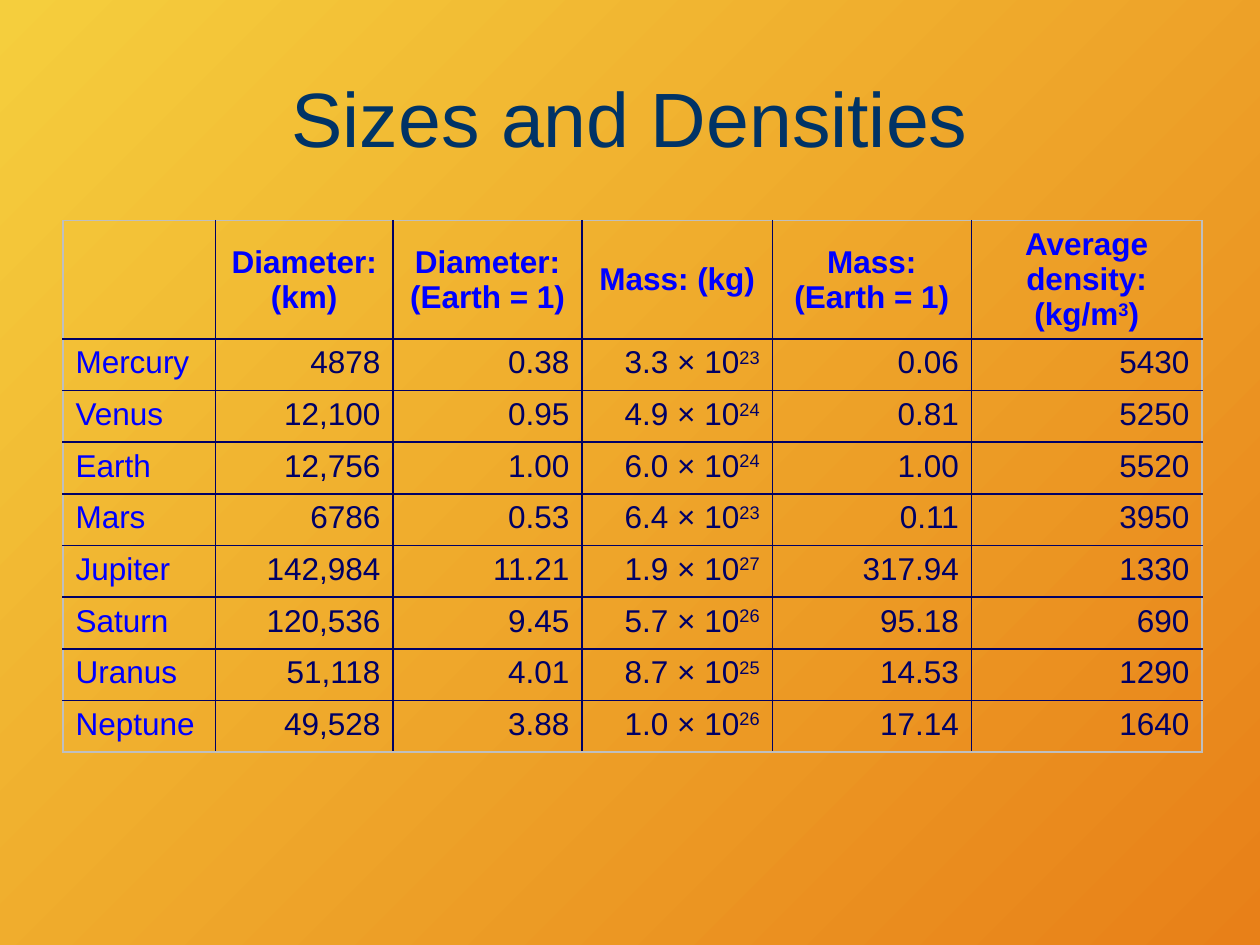
"""Build a slide with a table of planet sizes and densities."""
from dataclasses import dataclass

from lxml import etree
from pptx import Presentation
from pptx import util as u
from pptx.dml.color import RGBColor
from pptx.enum import text
from pptx.oxml import ns

PX = 9144


@dataclass(frozen=True)
class Theme:
    """Hold the colours, font and type sizes."""
    font: str = "Arial"
    head: str = "003366"
    label: str = "0000FF"
    ink: str = "000066"
    rim: str = "BFBFBF"
    light: str = "F5CE3D"
    deep: str = "E88018"
    big: int = 44
    body: int = 18


class Deck:
    """Draw styled elements on the current slide."""

    def __init__(self, theme, wide, high):
        """Open a deck of the given size."""
        self.theme = theme
        self.show = Presentation()
        self.show.slide_width, self.show.slide_height = wide * PX, high * PX
        self.slide = None

    def page(self):
        """Add a title-only slide with a diagonal gradient."""
        self.slide = self.show.slides.add_slide(self.show.slide_layouts[5])
        fill = self.slide.background.fill
        fill.gradient()
        fill.gradient_angle = 315
        for stop, tone in zip(fill.gradient_stops, (self.theme.light, self.theme.deep)):
            stop.color.rgb = RGBColor.from_string(tone)

    def label(self, frame, words, size, tone, align, bold=False):
        """Add text runs, raising each part between carets."""
        para = frame.paragraphs[0]
        para.alignment = align
        para.font.size = u.Pt(size)
        for num, part in enumerate(words.split("^")):
            if not part:
                continue
            run = para.add_run()
            run.text = part
            font = run.font
            font.name, font.size, font.bold = self.theme.font, u.Pt(size), bold
            font.color.rgb = RGBColor.from_string(tone)
            if num % 2:
                run._r.get_or_add_rPr().set("baseline", "30000")

    def title(self, words, left, top, wide, high):
        """Place and fill the title."""
        box = self.slide.shapes.title
        box.left, box.top, box.width, box.height = (n * PX for n in (left, top, wide, high))
        box.text_frame.vertical_anchor = text.MSO_ANCHOR.MIDDLE
        self.label(box.text_frame, words, self.theme.big, self.theme.head,
                   text.PP_ALIGN.CENTER)

    def edge(self, cell, side, tone):
        """Draw one border of a cell."""
        line = etree.SubElement(cell._tc.get_or_add_tcPr(), ns.qn(f"a:ln{side}"), w="12700")
        fill = etree.SubElement(line, ns.qn("a:solidFill"))
        etree.SubElement(fill, ns.qn("a:srgbClr"), val=tone)

    def table(self, rows, left, top, cols, highs):
        """Add a ruled table with a bold head and a label column."""
        look = self.theme
        grid = self.slide.shapes.add_table(
            len(rows), len(cols), left * PX, top * PX,
            sum(cols) * PX, sum(highs) * PX).table
        grid.horz_banding = grid.first_row = False
        for col, wide in zip(grid.columns, cols):
            col.width = wide * PX
        for r, (row, high) in enumerate(zip(rows, highs)):
            grid.rows[r].height = high * PX
            for c, words in enumerate(row):
                cell = grid.cell(r, c)
                outer = {"L": c == 0, "R": c == len(cols) - 1,
                         "T": r == 0, "B": r == len(rows) - 1}
                for side, rim in outer.items():
                    self.edge(cell, side, look.rim if rim else look.ink)
                cell.fill.background()
                align = text.PP_ALIGN.RIGHT if c else text.PP_ALIGN.LEFT
                if r == 0:
                    align = text.PP_ALIGN.CENTER
                    cell.vertical_anchor = text.MSO_ANCHOR.MIDDLE
                tone = look.ink if r and c else look.label
                self.label(cell.text_frame, words, look.body, tone, align, r == 0)


ROWS = [
    ("", "Diameter:(km)", "Diameter: (Earth = 1)", "Mass: (kg)",
     "Mass: (Earth = 1)", "Average density: (kg/m^3^)"),
    ("Mercury", "4878", "0.38", "3.3 × 10^23", "0.06", "5430"),
    ("Venus", "12,100", "0.95", "4.9 × 10^24", "0.81", "5250"),
    ("Earth", "12,756", "1.00", "6.0 × 10^24", "1.00", "5520"),
    ("Mars", "6786", "0.53", "6.4 × 10^23", "0.11", "3950"),
    ("Jupiter", "142,984", "11.21", "1.9 × 10^27", "317.94", "1330"),
    ("Saturn", "120,536", "9.45", "5.7 × 10^26", "95.18", "690"),
    ("Uranus", "51,118", "4.01", "8.7 × 10^25", "14.53", "1290"),
    ("Neptune", "49,528", "3.88", "1.0 × 10^26", "17.14", "1640"),
]


def main():
    """Build and save the slide."""
    deck = Deck(Theme(), 1000, 750)
    deck.page()
    deck.title("Sizes and Densities", 50, 30, 900, 125)
    deck.table(ROWS, 50, 175, (121, 141, 150, 151, 158, 183), [94] + [41] * 8)
    deck.show.save("out.pptx")


if __name__ == "__main__":
    main()
